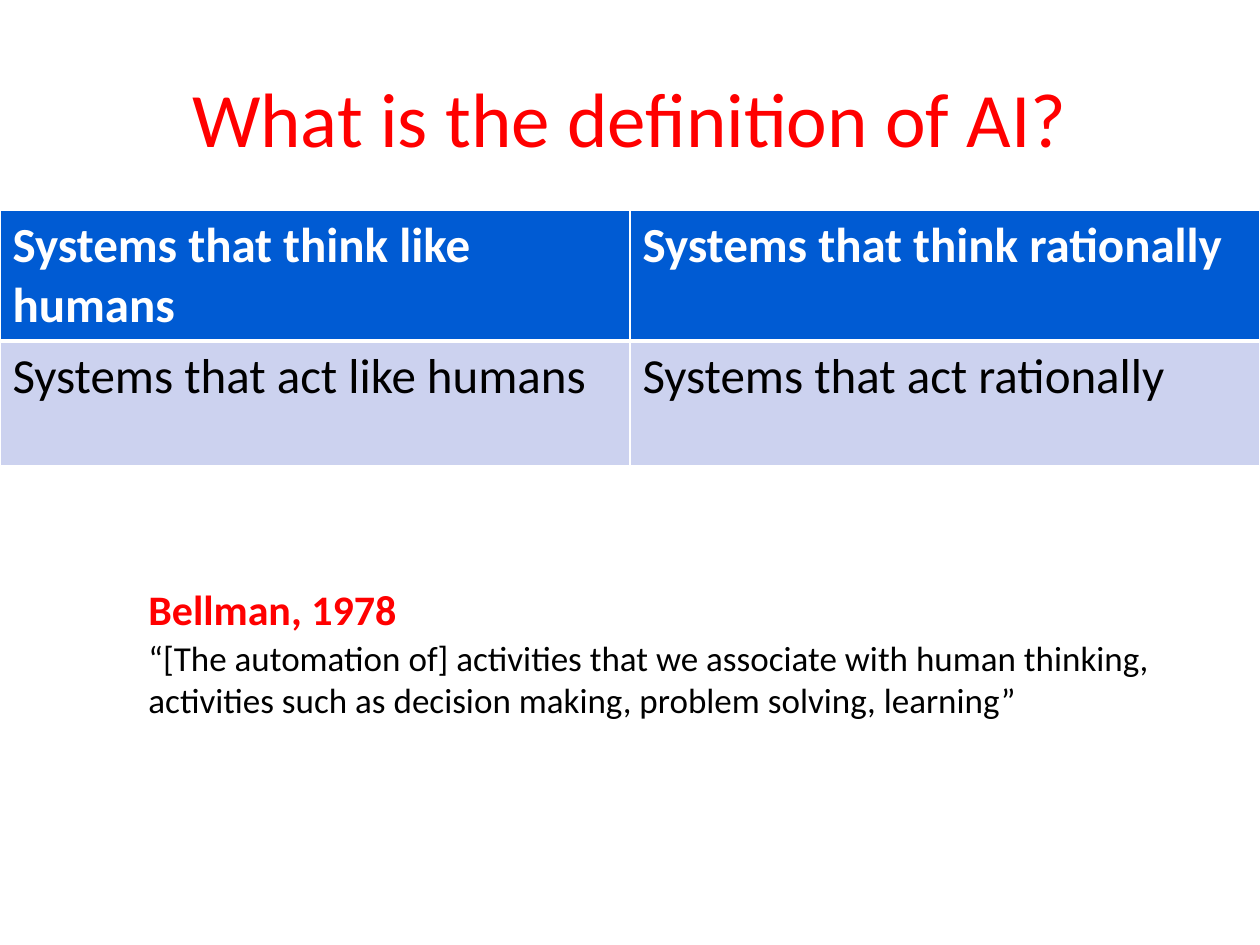
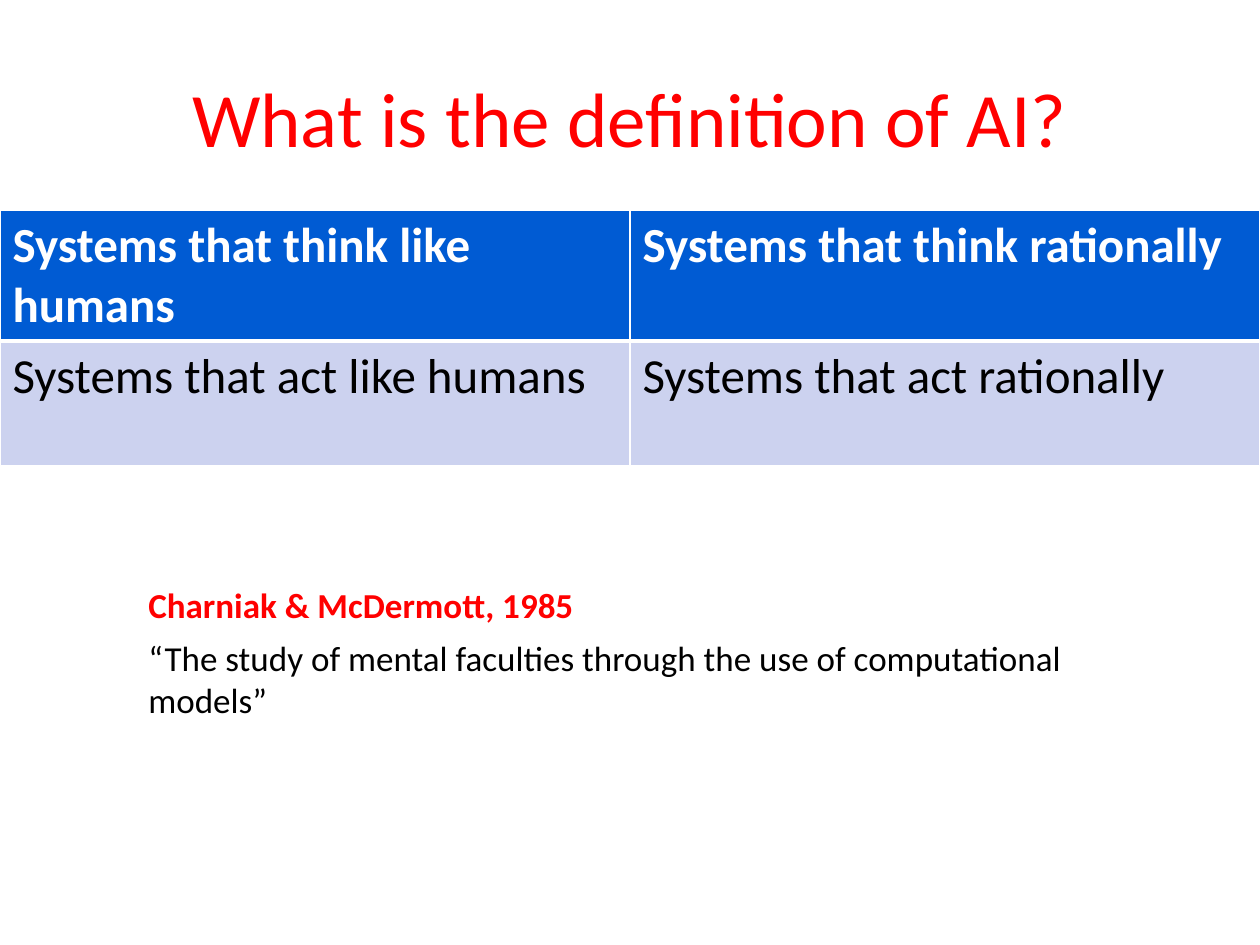
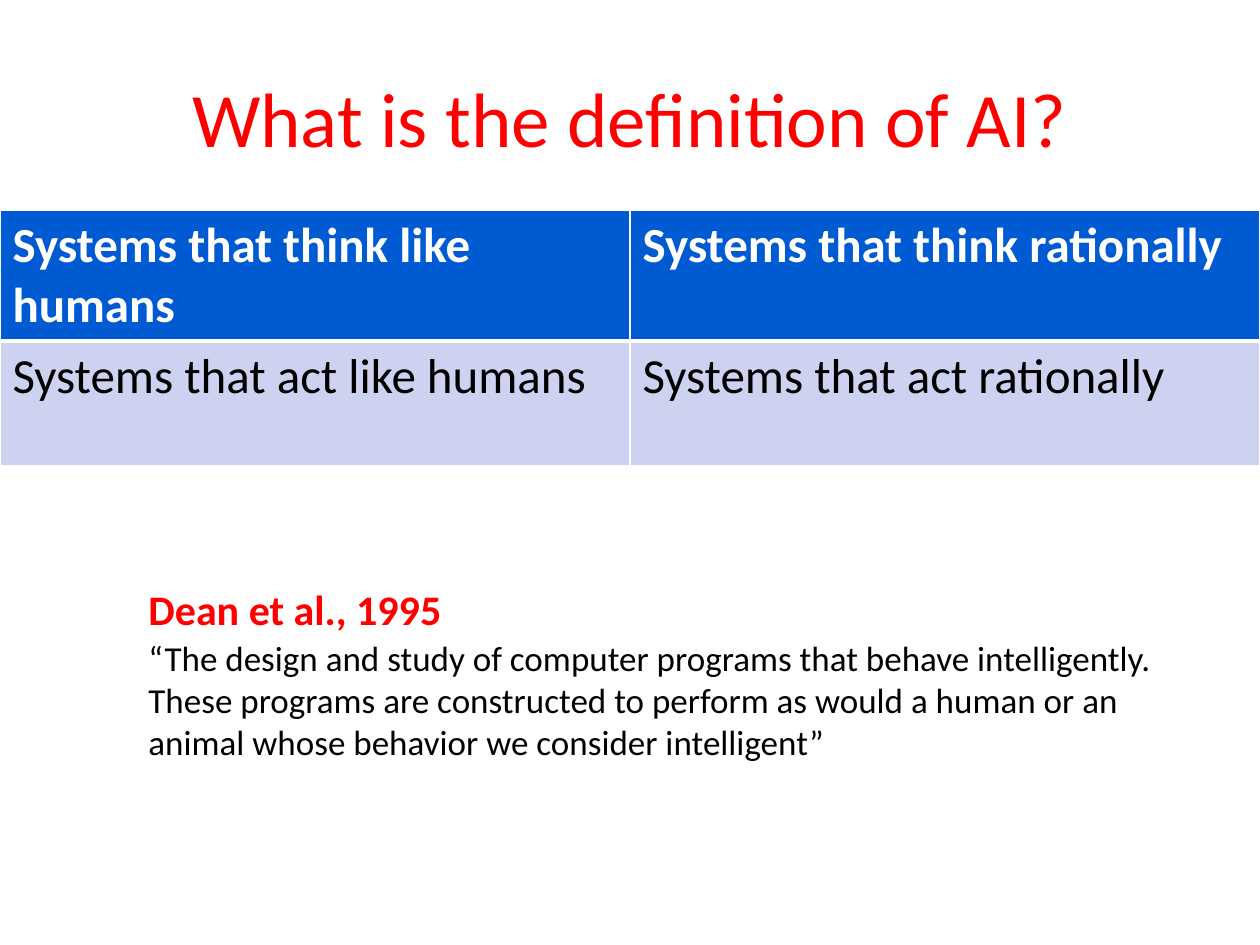
from lxml.etree import SubElement
from pptx import Presentation
from pptx.dml.color import RGBColor
from pptx.enum.text import MSO_ANCHOR, MSO_AUTO_SIZE, PP_ALIGN
from pptx.oxml.ns import qn
from pptx.util import Emu, Pt

PX_PER_INCH = 126
FONT = "Calibri"
COLORS = {
    "accent": "FF0000",
    "header": "005BD3",
    "body": "CCD2EF",
    "white": "FFFFFF",
    "black": "000000",
}
TITLE = "What is the definition of AI?"
CATEGORIES = [
    ["Systems that think like humans", "Systems that think rationally"],
    ["Systems that act like humans", "Systems that act rationally"],
]
ROW_HEIGHTS = [131, 125]
# Border widths in points; the edge between the two rows is thicker.
BORDERS = [
    {"lnL": 1, "lnR": 1, "lnT": 1, "lnB": 3},
    {"lnL": 1, "lnR": 1, "lnT": 3, "lnB": 1},
]
# Author, author text size, author box width and height, quote, quote height
DEFINITIONS = [
    ("Bellman, 1978", 24, 276, 63,
     "“[The automation of] activities that we associate with human thinking, "
     "activities such as decision making, problem solving, learning”", 97),
    ("Charniak & McDermott, 1985", 20, 455, 55,
     "“The study of mental faculties through the use of computational models”", 97),
    ("Dean et al., 1995", 24, 321, 63,
     "“The design and study of computer programs that behave intelligently. "
     "These programs are constructed to perform as would a human or an animal "
     "whose behavior we consider intelligent”", 140),
]


def px(length):
    """Turn a length in px into EMU."""
    return Emu(round(length * 914400 / PX_PER_INCH))


def write(frame, text, size, color, bold=False):
    frame.text = text
    font = frame.paragraphs[0].runs[0].font
    font.name = FONT
    font.size = Pt(size)
    font.bold = bold
    font.color.rgb = RGBColor.from_string(COLORS[color])


deck = Presentation()
deck.slide_width, deck.slide_height = px(1260), px(945)

for author, author_size, author_width, author_height, quote, quote_height in DEFINITIONS:
    page = deck.slides.add_slide(deck.slide_layouts[6])

    title = page.shapes.add_textbox(px(63), px(38), px(1134), px(157)).text_frame
    title.word_wrap = True
    title.vertical_anchor = MSO_ANCHOR.MIDDLE
    write(title, TITLE, 44, "accent")
    title.paragraphs[0].alignment = PP_ALIGN.CENTER

    table = page.shapes.add_table(
        2, 2, px(0), px(210), px(1260), px(sum(ROW_HEIGHTS))).table
    for row, labels in enumerate(CATEGORIES):
        is_header = row == 0
        table.rows[row].height = px(ROW_HEIGHTS[row])
        for column, label in enumerate(labels):
            cell = table.cell(row, column)
            write(cell.text_frame, label, 28,
                  "white" if is_header else "black", bold=is_header)
            properties = cell._tc.get_or_add_tcPr()
            for edge, width in BORDERS[row].items():
                line = SubElement(properties, qn(f"a:{edge}"), w=str(Pt(width)))
                line_fill = SubElement(line, qn("a:solidFill"))
                SubElement(line_fill, qn("a:srgbClr"), val=COLORS["white"])
            cell.fill.solid()
            cell.fill.fore_color.rgb = RGBColor.from_string(
                COLORS["header" if is_header else "body"])

    author_box = page.shapes.add_textbox(
        px(136), px(577), px(author_width), px(author_height)).text_frame
    author_box.word_wrap = False
    author_box.auto_size = MSO_AUTO_SIZE.SHAPE_TO_FIT_TEXT
    write(author_box, author, author_size, "accent", bold=True)

    quote_box = page.shapes.add_textbox(
        px(136), px(630), px(1040), px(quote_height)).text_frame
    quote_box.word_wrap = True
    quote_box.auto_size = MSO_AUTO_SIZE.SHAPE_TO_FIT_TEXT
    write(quote_box, quote, 20, "black")

deck.save("out.pptx")
